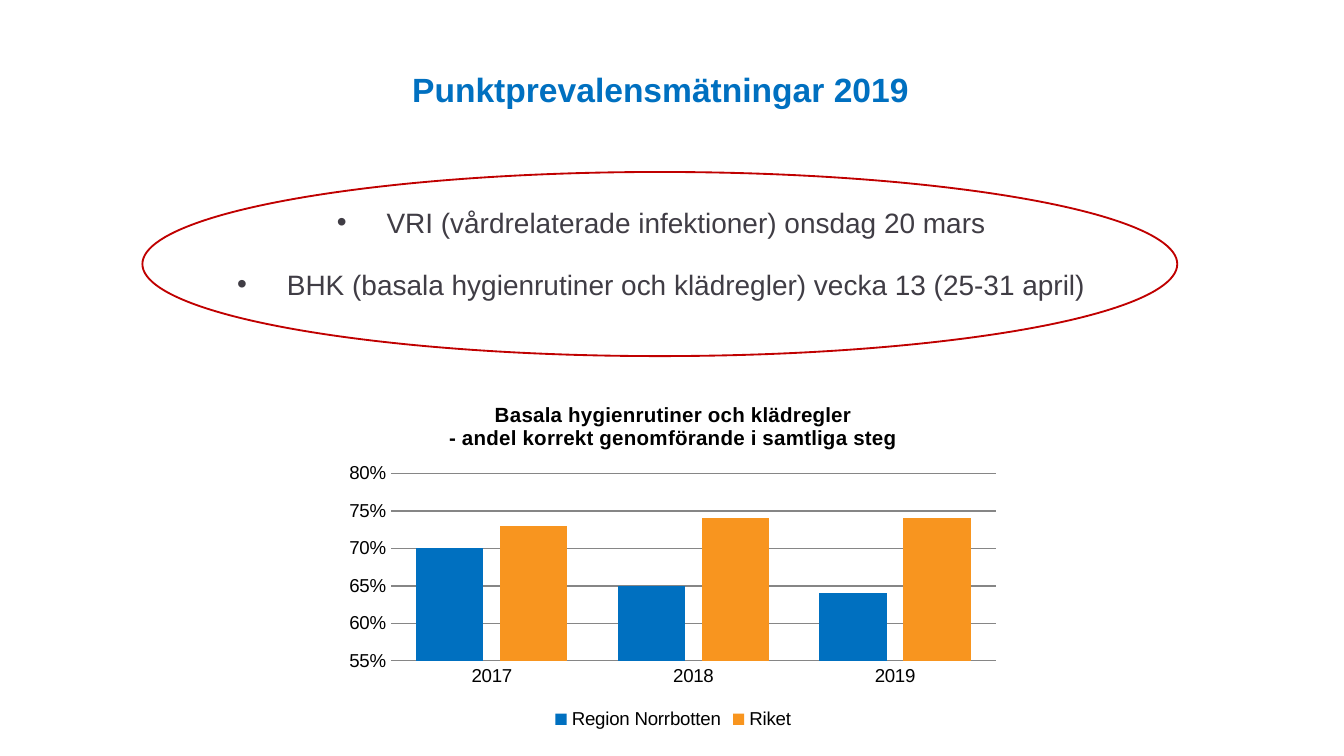
from lxml import etree
from pptx import Presentation
from pptx.chart.data import CategoryChartData
from pptx.dml.color import RGBColor
from pptx.enum.chart import XL_CHART_TYPE, XL_LEGEND_POSITION, XL_TICK_MARK
from pptx.enum.shapes import MSO_SHAPE
from pptx.enum.text import MSO_ANCHOR, PP_ALIGN
from pptx.oxml.ns import qn
from pptx.util import Inches, Pt

COLUMN = XL_CHART_TYPE.COLUMN_CLUSTERED
BOTTOM = XL_LEGEND_POSITION.BOTTOM
NO_TICK = XL_TICK_MARK.NONE
OVAL = MSO_SHAPE.OVAL
LOW, HIGH = MSO_ANCHOR.BOTTOM, MSO_ANCHOR.TOP
CENTER = PP_ALIGN.CENTER

BLUE = RGBColor(0x00, 0x70, 0xC0)
ORANGE = RGBColor(0xF8, 0x95, 0x1F)
RED = RGBColor(0xC0, 0x00, 0x00)
GREY = RGBColor(0x40, 0x3D, 0x45)
RULE = RGBColor(0x86, 0x86, 0x86)
BLACK = RGBColor(0, 0, 0)
FONT = "Arial"

TITLE = "Punktprevalensmätningar 2019"
POINTS = [
    "VRI (vårdrelaterade infektioner) onsdag 20 mars",
    "BHK (basala hygienrutiner och klädregler) vecka 13 (25-31 april)",
]
HEADING = [
    "Basala hygienrutiner och klädregler",
    "- andel korrekt genomförande i samtliga steg",
]
YEARS = ["2017", "2018", "2019"]
SERIES = [
    ("Region Norrbotten", BLUE, (0.70, 0.65, 0.64)),
    ("Riket", ORANGE, (0.73, 0.74, 0.74)),
]
PLOT = {"x": 0.08, "y": 0.26, "w": 0.9, "h": 0.53}


def style(font, size, color, bold=False):
    font.name, font.size, font.bold = FONT, Pt(size), bold
    font.color.rgb = color


def box(*sizes):
    return [Inches(n) for n in sizes]


def set_frame(frame, anchor, top=0.04):
    frame.word_wrap = True
    frame.vertical_anchor = anchor
    frame.margin_left = frame.margin_right = Inches(0.07)
    frame.margin_top, frame.margin_bottom = Inches(top), Inches(0.04)


def add_bullet(para):
    props = para._p.get_or_add_pPr()
    props.set("marL", str(Inches(0.37)))
    props.set("indent", str(Inches(-0.37)))
    etree.SubElement(props, qn("a:buFont")).set("typeface", FONT)
    etree.SubElement(props, qn("a:buChar")).set("char", "•")


def place_plot(chart):
    """Fix the inner plot area as fractions of the chart."""
    area = chart._chartSpace.chart.plotArea
    for old in area.findall(qn("c:layout")):
        area.remove(old)
    layout = etree.Element(qn("c:layout"))
    manual = etree.SubElement(layout, qn("c:manualLayout"))
    parts = [("layoutTarget", "inner"), ("xMode", "edge"), ("yMode", "edge")]
    for tag, value in parts + list(PLOT.items()):
        etree.SubElement(manual, qn("c:" + tag)).set("val", str(value))
    area.insert(0, layout)


def add_title(slide):
    title = slide.shapes.title
    title.left, title.top, title.width, title.height = box(0.64, 0.19, 8.55, 0.66)
    set_frame(title.text_frame, LOW)
    title.text_frame.text = TITLE
    para = title.text_frame.paragraphs[0]
    para.alignment = CENTER
    style(para.font, 18, BLUE, True)


def add_points(slide):
    frame = slide.shapes.add_textbox(*box(1.36, 1.27, 7.12, 0.77)).text_frame
    set_frame(frame, HIGH, 0.26)
    for i, text in enumerate(POINTS):
        para = frame.add_paragraph() if i else frame.paragraphs[0]
        para.text = text
        para.alignment = CENTER
        if i:
            para.space_before = Pt(15)
        add_bullet(para)
        style(para.font, 15, GREY)


def add_ring(slide):
    ring = slide.shapes.add_shape(OVAL, *box(1.06, 1.28, 7.7, 1.37))
    ring.shadow.inherit = False
    ring.fill.background()
    ring.line.color.rgb = RED
    ring.line.width = Pt(1)


def add_chart(slide):
    data = CategoryChartData(number_format="0%")
    data.categories = YEARS
    for name, _, values in SERIES:
        data.add_series(name, values)
    chart = slide.shapes.add_chart(COLUMN, *box(2.51, 2.84, 5, 2.63), data).chart
    style(chart.font, 10, BLACK)

    frame = chart.chart_title.text_frame
    for i, text in enumerate(HEADING):
        para = frame.add_paragraph() if i else frame.paragraphs[0]
        para.text = text
        style(para.font, 11, BLACK, True)
    chart.chart_title.include_in_layout = False
    chart.has_legend = True
    chart.legend.position = BOTTOM
    chart.legend.include_in_layout = False

    years, share = chart.category_axis, chart.value_axis
    for axis in (years, share):
        axis.major_tick_mark = axis.minor_tick_mark = NO_TICK
    years.format.line.color.rgb = RULE
    share.format.line.fill.background()
    share.minimum_scale, share.maximum_scale, share.major_unit = 0.55, 0.8, 0.05
    share.tick_labels.number_format = "0%"
    share.tick_labels.number_format_is_linked = False
    share.major_gridlines.format.line.color.rgb = RULE
    share.major_gridlines.format.line.width = Pt(0.75)

    plot = chart.plots[0]
    plot.gap_width, plot.overlap, plot.vary_by_categories = 75, -25, False
    for bars, (_, color, _) in zip(plot.series, SERIES):
        bars.format.fill.solid()
        bars.format.fill.fore_color.rgb = color
    place_plot(chart)


def main():
    deck = Presentation()
    deck.slide_width, deck.slide_height = box(10, 10 * 9 / 16)
    slide = deck.slides.add_slide(deck.slide_layouts[5])
    add_title(slide)
    add_points(slide)
    add_ring(slide)
    add_chart(slide)
    deck.save("out.pptx")


if __name__ == "__main__":
    main()
